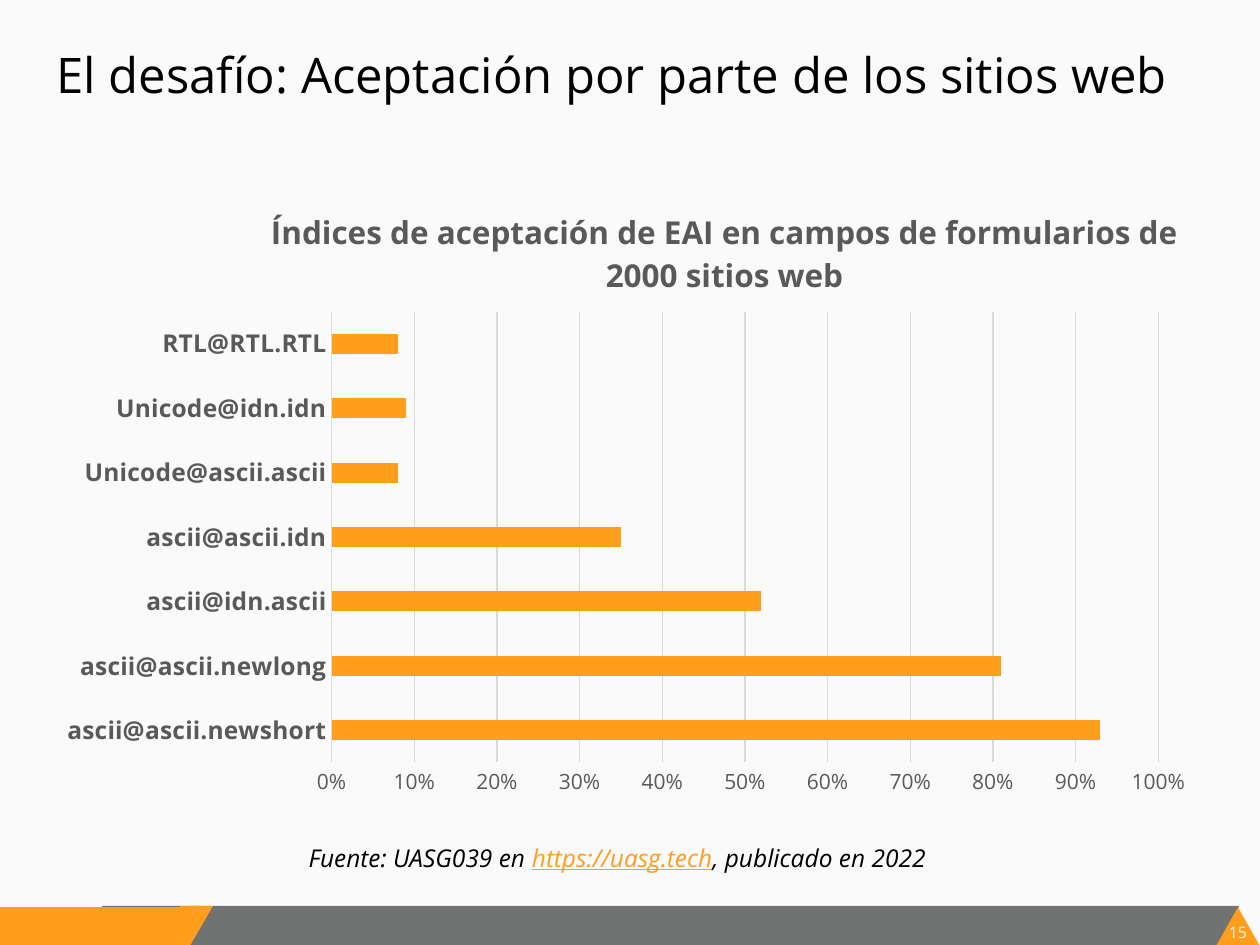
"""Build the slide on website acceptance of internationalised e-mail addresses."""
from lxml import etree
from pptx import Presentation
from pptx.chart.data import CategoryChartData
from pptx.dml.color import RGBColor
from pptx.enum.chart import XL_CHART_TYPE, XL_TICK_MARK
from pptx.enum.shapes import MSO_SHAPE
from pptx.enum.text import MSO_ANCHOR, PP_ALIGN
from pptx.oxml.ns import qn
from pptx.util import Inches, Pt

ORANGE, GREY, PAPER, INK = "FF9E1B", "707372", "FAFAFA", "000000"
LABEL, GRID = "595959", "D9D9D9"


def style(font, color, **values):
    """Apply the font family, a hex colour and any other font values."""
    for name, value in {"name": "Open Sans", **values}.items():
        setattr(font, name, value)
    font.color.rgb = RGBColor.from_string(color)


def place(element, index, **values):
    """Give a chart element a manual layout as fractions of the chart."""
    for old in element.findall(qn("c:layout")):
        element.remove(old)
    layout = etree.Element(qn("c:layout"))
    manual = etree.SubElement(layout, qn("c:manualLayout"))
    for name, value in values.items():
        etree.SubElement(manual, qn(f"c:{name}")).set("val", str(value))
    element.insert(index, layout)


prs = Presentation()
prs.slide_width, prs.slide_height = Inches(10), Inches(7.5)
slide = prs.slides.add_slide(prs.slide_layouts[5])
slide.background.fill.solid()
slide.background.fill.fore_color.rgb = RGBColor.from_string(PAPER)

footer = [
    (MSO_SHAPE.RECTANGLE, 0.81, 7.19, 9.02, 0.31, GREY),
    (MSO_SHAPE.RECTANGLE, 0, 7.2, 1.5, 0.31, ORANGE),
    (MSO_SHAPE.ISOSCELES_TRIANGLE, 9.65, 7.2, 0.35, 0.31, ORANGE),
    (MSO_SHAPE.PARALLELOGRAM, 1.34, 7.19, 0.35, 0.31, ORANGE),
    (MSO_SHAPE.RECTANGLE, 1.43, 7.19, 0.14, 0.13, ORANGE),
]
for preset, left, top, width, height, color in footer:
    piece = slide.shapes.add_shape(
        preset, Inches(left), Inches(top), Inches(width), Inches(height))
    piece.shadow.inherit = False
    piece.fill.solid()
    piece.fill.fore_color.rgb = RGBColor.from_string(color)
    piece.line.fill.background()
    if preset == MSO_SHAPE.PARALLELOGRAM:
        piece.adjustments[0] = 0.58
        piece.rotation = 180

page_number = slide.shapes.add_textbox(
    Inches(9.74), Inches(7.32), Inches(0.17), Inches(0.15)).text_frame
for side in ("left", "top", "right", "bottom"):
    setattr(page_number, f"margin_{side}", 0)
page_number.text = "15"
page_number.paragraphs[0].alignment = PP_ALIGN.CENTER
style(page_number.paragraphs[0].runs[0].font, PAPER, size=Pt(9))

title = slide.shapes.title
title.left, title.top = Inches(0.35), Inches(0.3)
title.width, title.height = Inches(9.24), Inches(1.25)
title.text_frame.text = "El desafío: Aceptación por parte de los sitios web"
title.text_frame.vertical_anchor = MSO_ANCHOR.TOP
title.text_frame.paragraphs[0].alignment = PP_ALIGN.LEFT
style(title.text_frame.paragraphs[0].runs[0].font, INK, size=Pt(28))

acceptance = {
    "ascii@ascii.newshort": 0.93,
    "ascii@ascii.newlong": 0.81,
    "ascii@idn.ascii": 0.52,
    "ascii@ascii.idn": 0.35,
    "Unicode@ascii.ascii": 0.08,
    "Unicode@idn.idn": 0.09,
    "RTL@RTL.RTL": 0.08,
}
data = CategoryChartData(number_format="0%")
data.categories = list(acceptance)
data.add_series("Series 1", list(acceptance.values()))
chart = slide.shapes.add_chart(
    XL_CHART_TYPE.BAR_CLUSTERED,
    Inches(0.35), Inches(1.39), Inches(9.24), Inches(5.04), data).chart
chart.has_legend = False
style(chart.font, INK, size=Pt(10))

heading = chart.chart_title.text_frame
heading.text = "Índices de aceptación de EAI en campos de formularios de 2000 sitios web"
style(heading.paragraphs[0].runs[0].font, LABEL, size=Pt(18), bold=True)
place(chart.element.xpath("c:chart/c:title")[0], 1,
      xMode="edge", yMode="edge", x=0.19, y=0.04)
place(chart.element.xpath("c:chart/c:plotArea")[0], 0,
      layoutTarget="inner", xMode="edge", yMode="edge",
      x=0.247, y=0.215, w=0.71, h=0.71)

bars = chart.plots[0]
bars.vary_by_categories = False
bars.gap_width = 219
bars.series[0].format.fill.solid()
bars.series[0].format.fill.fore_color.rgb = RGBColor.from_string(ORANGE)

addresses, rate = chart.category_axis, chart.value_axis
for axis, size, bold in ((addresses, 14, True), (rate, 12, False)):
    axis.major_tick_mark = axis.minor_tick_mark = XL_TICK_MARK.NONE
    style(axis.tick_labels.font, LABEL, size=Pt(size), bold=bold)
rate.minimum_scale, rate.maximum_scale, rate.major_unit = 0, 1, 0.1
rate.tick_labels.number_format = "0%"
rate.tick_labels.number_format_is_linked = False
rate.format.line.fill.background()
rate.has_major_gridlines = True
for line in (addresses.format.line, rate.major_gridlines.format.line):
    line.color.rgb = RGBColor.from_string(GRID)
    line.width = Pt(0.75)

source = slide.shapes.add_textbox(
    Inches(2.35), Inches(6.64), Inches(7.35), Inches(0.34)).text_frame
source.word_wrap = True
for text, color, underline in (
        ("Fuente: UASG039 en ", INK, False),
        ("https://uasg.tech", ORANGE, True),
        (", publicado en 2022", INK, False)):
    run = source.paragraphs[0].add_run()
    run.text = text
    style(run.font, color, size=Pt(14), italic=True, underline=underline)

prs.save("out.pptx")
